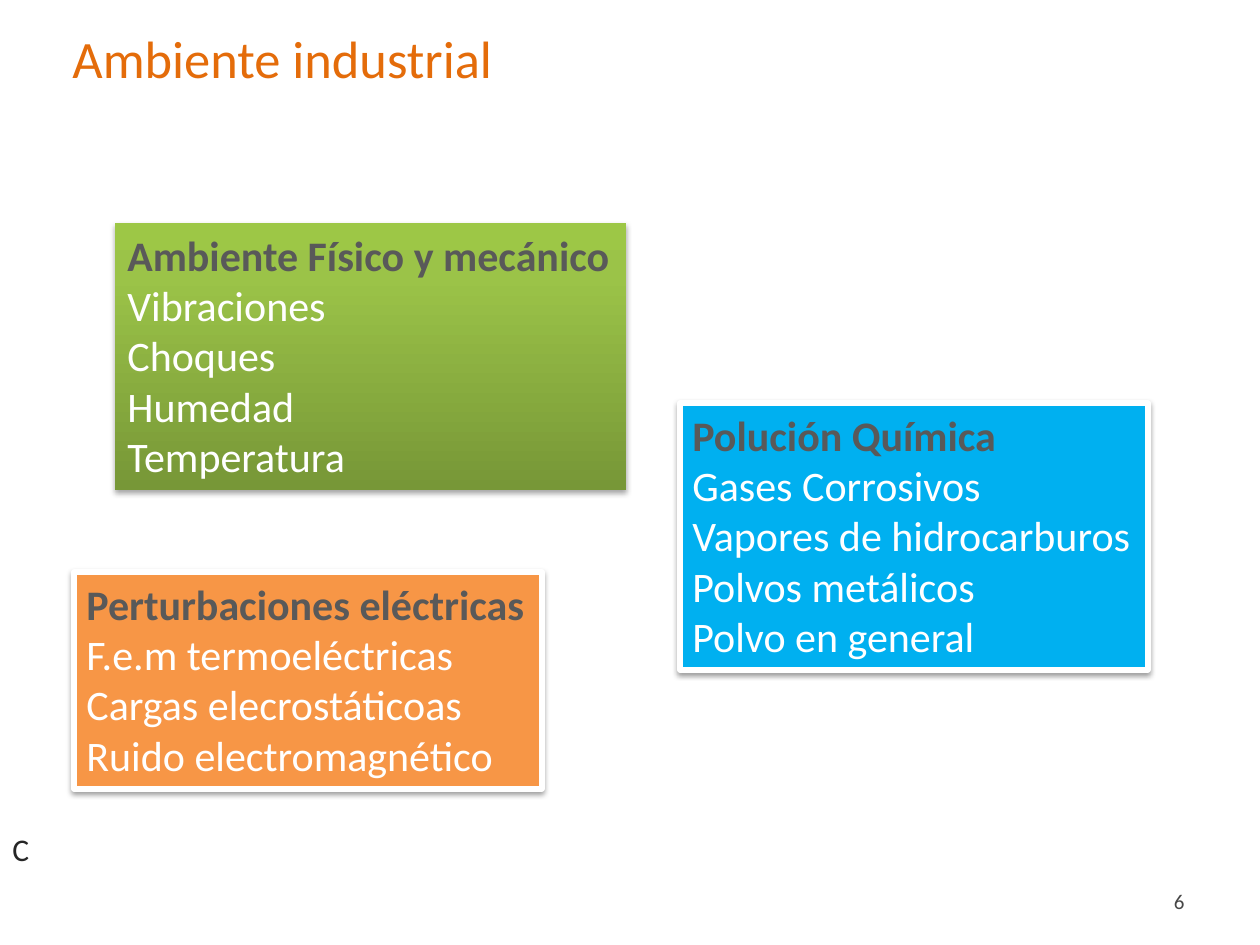
import pptx
import pptx.dml.color
import pptx.enum.shapes
import pptx.enum.text
import pptx.oxml
import pptx.oxml.ns
import pptx.util

PX = 914400 // 126  # EMU per pixel
ANCHOR = pptx.enum.text.MSO_ANCHOR
ALIGN = pptx.enum.text.PP_ALIGN
AUTO_SIZE = pptx.enum.text.MSO_AUTO_SIZE
GREY, WHITE = "595959", "FFFFFF"


def color(value):
    return pptx.dml.color.RGBColor.from_string(value)


def write(shape, lines, size=24, first="000000", rest=WHITE, bold=False,
          align=ALIGN.LEFT, anchor=ANCHOR.TOP, wrap=True, fit=False):
    """Write one paragraph per line; the first line has its own colour and weight."""
    frame = shape.text_frame
    frame.word_wrap = wrap
    frame.auto_size = AUTO_SIZE.SHAPE_TO_FIT_TEXT if fit else AUTO_SIZE.NONE
    frame.vertical_anchor = anchor
    for index, line in enumerate(lines):
        paragraph = frame.add_paragraph() if index else frame.paragraphs[0]
        paragraph.alignment = align
        run = paragraph.add_run()
        run.text = line
        run.font.name = "Calibri"
        run.font.size = pptx.util.Pt(size)
        run.font.bold = bold and index == 0
        run.font.color.rgb = color(rest if index else first)


presentation = pptx.Presentation()
presentation.slide_width = 1260 * PX
presentation.slide_height = 945 * PX
slide = presentation.slides.add_slide(presentation.slide_layouts[6])

# Title, page number and loose letter
labels = [
    ("Ambiente industrial", (60, 10, 1158, 95),
     dict(size=30, first="E46C0A", anchor=ANCHOR.MIDDLE)),
    ("6", (903, 876, 294, 50),
     dict(size=12, first="474747", align=ALIGN.RIGHT, anchor=ANCHOR.MIDDLE)),
    ("C", (0, 824, 43, 50), dict(size=18, first="262626", fit=True)),
]
for text, box, style in labels:
    textbox = slide.shapes.add_textbox(*[length * PX for length in box])
    write(textbox, [text], **style)

# Cards: box, fill (several stops make a gradient), shadow, lines
cards = [
    ((115, 223, 511, 267), [(0, "779737"), (80, "9BC348"), (100, "9DC746")], (35, 1.8),
     ["Ambiente Físico y mecánico", "Vibraciones", "Choques", "Humedad", "Temperatura"]),
    ((680, 403, 468, 267), [(0, "00B0F0")], (38, 1.6),
     ["Polución Química", "Gases Corrosivos", "Vapores de hidrocarburos",
      "Polvos metálicos", "Polvo en general"]),
    ((74, 572, 468, 217), [(0, "F79646")], (38, 1.6),
     ["Perturbaciones eléctricas", "F.e.m termoeléctricas",
      "Cargas elecrostáticoas", "Ruido electromagnético"]),
]
namespace = pptx.oxml.ns.nsdecls("a")
for box, stops, (opacity, distance), lines in cards:
    card = slide.shapes.add_shape(pptx.enum.shapes.MSO_SHAPE.RECTANGLE,
                                  *[length * PX for length in box])
    properties = card.element.spPr

    # Fill and outline
    card.fill.solid()
    card.fill.fore_color.rgb = color(stops[0][1])
    if len(stops) > 1:
        stop_xml = "".join(
            f'<a:gs pos="{position * 1000}"><a:srgbClr val="{value}"/></a:gs>'
            for position, value in stops)
        gradient = pptx.oxml.parse_xml(
            f'<a:gradFill {namespace} rotWithShape="1"><a:gsLst>{stop_xml}</a:gsLst>'
            '<a:lin ang="16200000" scaled="0"/></a:gradFill>')
        properties.replace(properties.find(pptx.oxml.ns.qn("a:solidFill")), gradient)
        card.line.fill.background()
    else:
        card.line.color.rgb = color(WHITE)
        card.line.width = pptx.util.Pt(3)

    # Soft shadow straight below
    card.shadow.inherit = False
    properties.find(pptx.oxml.ns.qn("a:effectLst")).append(pptx.oxml.parse_xml(
        f'<a:outerShdw {namespace} blurRad="{pptx.util.Pt(3.1)}"'
        f' dist="{pptx.util.Pt(distance)}" dir="5400000" rotWithShape="0">'
        f'<a:srgbClr val="000000"><a:alpha val="{opacity * 1000}"/></a:srgbClr>'
        '</a:outerShdw>'))

    write(card, lines, first=GREY, bold=True, wrap=False, fit=True)

presentation.save("out.pptx")
